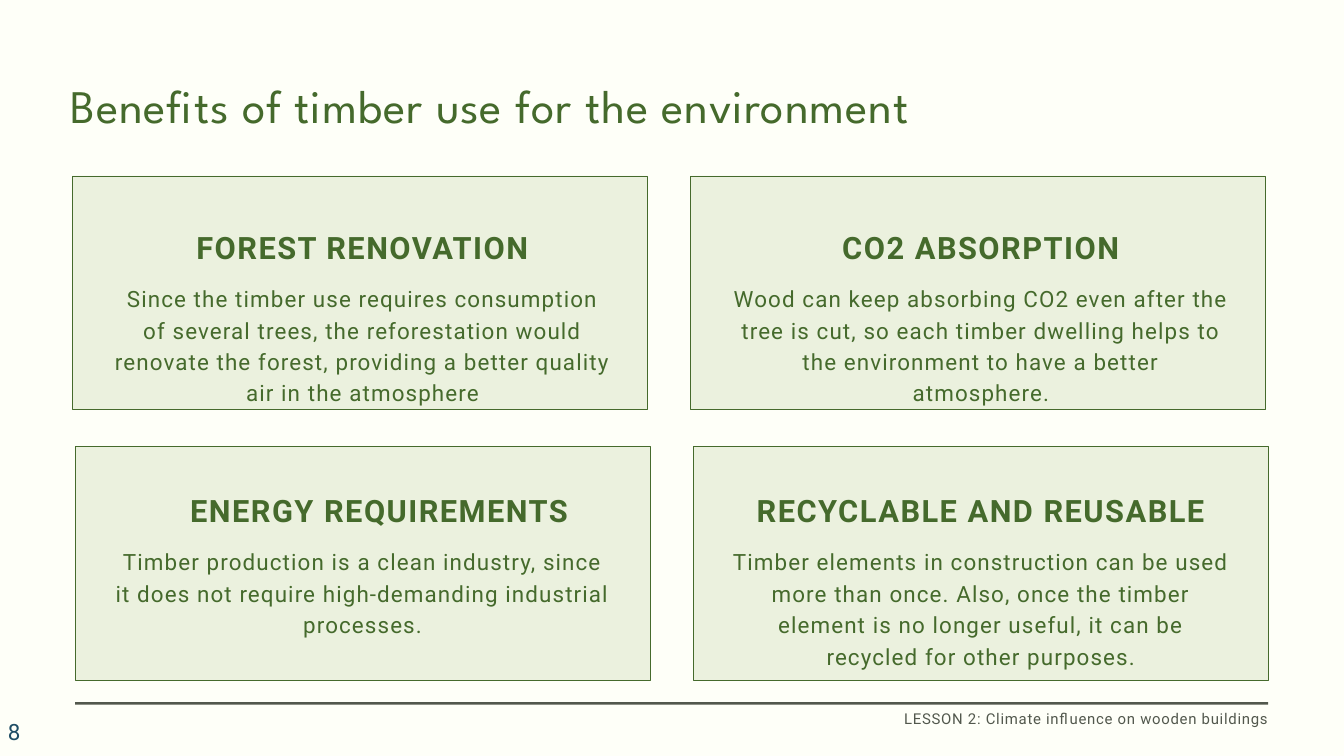
from dataclasses import dataclass
from typing import Any

from pptx import Presentation
from pptx.dml.color import RGBColor
from pptx.enum.shapes import MSO_SHAPE
from pptx.enum.text import MSO_ANCHOR, MSO_AUTO_SIZE, PP_ALIGN
from pptx.util import Cm, Pt

LEFT, CENTER, RIGHT = PP_ALIGN.LEFT, PP_ALIGN.CENTER, PP_ALIGN.RIGHT
TOP, MIDDLE = MSO_ANCHOR.TOP, MSO_ANCHOR.MIDDLE
GROW = MSO_AUTO_SIZE.SHAPE_TO_FIT_TEXT
RECTANGLE = MSO_SHAPE.RECTANGLE

COLORS = {
    "background": "FEFFF8",
    "green": "456A2C",
    "card": "EBF1DE",
    "grey": "52584D",
    "blue": "1E4D65",
}


@dataclass(frozen=True)
class Box:
    """A place on the slide, in centimetres."""
    left: float
    top: float
    width: float
    height: float


@dataclass(frozen=True)
class Style:
    """Text format; size, tracking and line height are in points."""
    size: float
    tracking: float
    line_height: float | None = None
    color: str = "green"
    typeface: str = "Roboto"
    bold: bool = False
    align: Any = CENTER


@dataclass(frozen=True)
class Benefit:
    heading: str
    body: str
    column: int
    row: int
    body_height: float
    indent: float = 0


TITLE = Style(50, 1, 66.8, typeface="League Spartan", align=LEFT)
HEADING = Style(33, 1.6, 41.2, bold=True)
BODY = Style(24, 1.2, 33.6)
FOOTER = Style(16, 0.8, 22.4, "grey", align=RIGHT)
PAGE_NUMBER = Style(24, 1.2, color="blue", align=LEFT)

# Card grid
COLUMN_STEP = 23.37
CARD_WIDTH, CARD_HEIGHT = 21.72, 8.84
CARD_LEFTS, CARD_TOPS = (2.74, 2.85), (6.65, 16.87)
TEXT_LEFT, TEXT_WIDTH = 4.32, 18.77
HEADING_TOPS, HEADING_HEIGHT = (8.59, 18.54), 1.42
BODY_OFFSET = 2.03

BENEFITS = (
    Benefit("FOREST RENOVATION",
            "Since the timber use requires consumption of several trees, the "
            "reforestation would renovate the forest, providing a better quality "
            "air in the atmosphere", 0, 0, 4.75),
    Benefit("CO2 ABSORPTION",
            "Wood can keep absorbing CO2 even after the tree is cut, so each "
            "timber dwelling helps to the environment to have a better "
            "atmosphere.", 1, 0, 3.56),
    Benefit("ENERGY REQUIREMENTS",
            "Timber production is a clean industry, since it does not require "
            "high-demanding industrial processes.", 0, 1, 3.56, indent=1.27),
    Benefit("RECYCLABLE AND REUSABLE",
            "Timber elements in construction can be used more than once. Also, "
            "once the timber element is no longer useful, it can be recycled for "
            "other purposes.", 1, 1, 4.75),
)


def rgb(name: str) -> RGBColor:
    return RGBColor.from_string(COLORS[name])


def lengths(box: Box) -> tuple:
    return Cm(box.left), Cm(box.top), Cm(box.width), Cm(box.height)


def write(frame, text: str, style: Style, indent: float = 0) -> None:
    paragraph = frame.paragraphs[0]
    paragraph.alignment = style.align
    if style.line_height:
        paragraph.line_spacing = Pt(style.line_height)
    if indent:
        paragraph.level = 1
        properties = paragraph._p.get_or_add_pPr()
        properties.set("marL", str(Cm(indent)))
        properties.set("indent", "0")
    run = paragraph.add_run()
    run.text = text
    font_format = {"name": style.typeface, "size": Pt(style.size), "bold": style.bold}
    for attribute, value in font_format.items():
        setattr(run.font, attribute, value)
    run.font.color.rgb = rgb(style.color)
    run._r.get_or_add_rPr().set("spc", str(round(style.tracking * 100)))


def fit_frame(frame) -> None:
    frame_format = {
        "word_wrap": True, "auto_size": GROW, "vertical_anchor": TOP,
        "margin_left": 0, "margin_right": 0, "margin_top": 0, "margin_bottom": 0,
    }
    for attribute, value in frame_format.items():
        setattr(frame, attribute, value)


def add_text(slide, box: Box, text: str, style: Style, indent: float = 0) -> None:
    frame = slide.shapes.add_textbox(*lengths(box)).text_frame
    fit_frame(frame)
    write(frame, text, style, indent)


def add_rectangle(slide, box: Box, fill: str, outline: str | None = None) -> None:
    rectangle = slide.shapes.add_shape(RECTANGLE, *lengths(box))
    rectangle.shadow.inherit = False
    rectangle.fill.solid()
    rectangle.fill.fore_color.rgb = rgb(fill)
    if outline:
        rectangle.line.color.rgb = rgb(outline)
        rectangle.line.width = Pt(0.75)
    else:
        rectangle.line.fill.background()


def add_benefit(slide, benefit: Benefit) -> None:
    shift = benefit.column * COLUMN_STEP
    row = benefit.row
    text_left, heading_top = TEXT_LEFT + shift, HEADING_TOPS[row]
    add_rectangle(slide, Box(CARD_LEFTS[row] + shift, CARD_TOPS[row],
                             CARD_WIDTH, CARD_HEIGHT), "card", "green")
    add_text(slide, Box(text_left, heading_top, TEXT_WIDTH, HEADING_HEIGHT),
             benefit.heading, HEADING, benefit.indent)
    add_text(slide, Box(text_left, heading_top + BODY_OFFSET, TEXT_WIDTH,
                        benefit.body_height), benefit.body, BODY)


def main() -> None:
    deck = Presentation()
    deck.slide_width, deck.slide_height = Cm(50.8), Cm(28.58)
    slide = deck.slides.add_slide(deck.slide_layouts[5])
    slide.background.fill.solid()
    slide.background.fill.fore_color.rgb = rgb("background")

    # Title
    title = slide.shapes.title
    title.left, title.top, title.width, title.height = lengths(
        Box(2.67, 2.67, 46.02, 2.39))
    fit_frame(title.text_frame)
    write(title.text_frame, "Benefits of timber use for the environment", TITLE)

    # Benefit cards
    for benefit in BENEFITS:
        add_benefit(slide, benefit)

    # Footer rule, page number and lesson name
    add_rectangle(slide, Box(2.84, 26.54, 45.09, 0.1), "grey")
    page_number = slide.shapes.add_textbox(*lengths(Box(0.05, 27.15, 5.92, 1.02)))
    page_number.text_frame.word_wrap = True
    page_number.text_frame.vertical_anchor = MIDDLE
    write(page_number.text_frame, "8", PAGE_NUMBER)
    add_text(slide, Box(26.82, 26.72, 21.13, 0.74),
             "LESSON 2: Climate influence on wooden buildings", FOOTER)

    deck.save("out.pptx")


if __name__ == "__main__":
    main()
